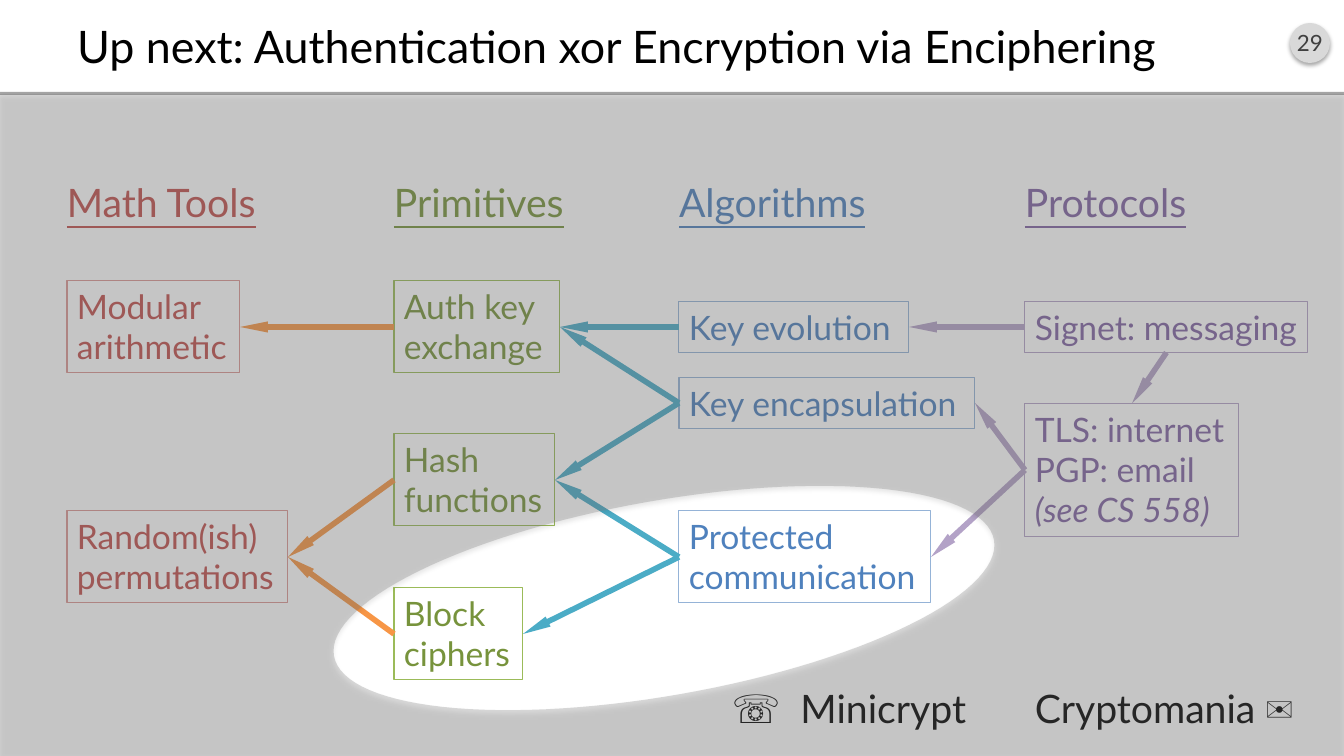
import math
import pptx
import pptx.util
import pptx.dml.color
import pptx.enum.shapes
import pptx.enum.text
import pptx.oxml
import pptx.oxml.ns

RGBColor = pptx.dml.color.RGBColor
SHAPE = pptx.enum.shapes.MSO_SHAPE
ALIGN = pptx.enum.text.PP_ALIGN
ANCHOR = pptx.enum.text.MSO_ANCHOR

BLACK = RGBColor(0, 0, 0)
BADGE_TEXT = RGBColor(0x40, 0x40, 0x40)
BADGE_FILL = RGBColor(0xD9, 0xD9, 0xD9)
RULE_GREY = RGBColor(0xA6, 0xA6, 0xA6)
VEIL_GREY = RGBColor(0x80, 0x80, 0x80)
RED, PINK = RGBColor(0xC0, 0x50, 0x4D), RGBColor(0xD9, 0x96, 0x94)
GREEN, LIME = RGBColor(0x77, 0x93, 0x3C), RGBColor(0x9B, 0xBB, 0x59)
BLUE, SKY = RGBColor(0x4F, 0x81, 0xBD), RGBColor(0x95, 0xB3, 0xD7)
PURPLE, LILAC = RGBColor(0x80, 0x64, 0xA2), RGBColor(0xB3, 0xA2, 0xC7)
ORANGE, TEAL = RGBColor(0xF7, 0x96, 0x46), RGBColor(0x4B, 0xAC, 0xC6)

FONT = "Lato"
WIDTH, HEIGHT = 1344, 756
TITLE = "Up next: Authentication xor Encryption via Enciphering"
PAGE = "29"

# heading, left, width, text colour, border colour, arrow colour
COLUMNS = [
    ("Math Tools", 67, 214, RED, PINK, None),
    ("Primitives", 394, 192, GREEN, LIME, ORANGE),
    ("Algorithms", 679, 208, BLUE, SKY, TEAL),
    ("Protocols", 1025, 181, PURPLE, LILAC, LILAC),
]
# name: column, centre height, width, paragraphs of lines
TOPICS = {
    "modular": (0, 327, 173, [["Modular", "arithmetic"]]),
    "random": (0, 557, 221, [["Random(ish)", "permutations"]]),
    "auth": (1, 327, 166, [["Auth key", "exchange"]]),
    "hash": (1, 480, 161, [["Hash", "functions"]]),
    "block": (1, 634, 129, [["Block", "ciphers"]]),
    "evolution": (2, 327, 230, [["Key evolution"]]),
    "encapsulation": (2, 403, 296, [["Key encapsulation"]]),
    "protected": (2, 557, 252, [["Protected", "communication"]]),
    "messaging": (3, 327, 283, [["Signet: messaging"]]),
    "internet": (3, 470, 214, [["TLS: internet", "PGP: email"], ["(see CS 558)"]]),
}
DEPENDENCIES = [
    ("auth", "modular"), ("hash", "random"), ("block", "random"),
    ("evolution", "auth"), ("encapsulation", "auth"), ("encapsulation", "hash"),
    ("protected", "hash"), ("protected", "block"), ("messaging", "evolution"),
    ("internet", "encapsulation"), ("internet", "protected"), ("messaging", "internet"),
]
WORLDS = [
    ("☏  Minicrypt", 713, 263, ALIGN.RIGHT),
    ("Cryptomania ✉", 1025, 300, ALIGN.LEFT),
]
VEIL_TOP = 94
SPOT_CENTRE, SPOT_LONG, SPOT_SHORT, SPOT_STEPS = (664, 598), (330, -58), (17, 96), 120
TOP, LEFT, BOTTOM, RIGHT = range(4)


def px(length):
    return round(length * 914400 / 100.8)


def box(*lengths):
    return [px(length) for length in lengths]


def add_run(paragraph, words, size, colour):
    run = paragraph.add_run()
    run.text = words
    run.font.name = FONT
    run.font.size = pptx.util.Pt(size)
    run.font.color.rgb = colour
    return run


def add_label(slide, place, paragraphs, size, colour):
    label = slide.shapes.add_textbox(*box(*place))
    frame = label.text_frame
    frame.word_wrap = False
    frame.auto_size = pptx.enum.text.MSO_AUTO_SIZE.SHAPE_TO_FIT_TEXT
    for i, lines in enumerate(paragraphs):
        paragraph = frame.add_paragraph() if i else frame.paragraphs[0]
        for j, words in enumerate(lines):
            if j:
                paragraph.add_line_break()
            add_run(paragraph, words, size, colour).font.italic = i > 0
    return label


def paint(shape, colour):
    shape.shadow.inherit = False
    shape.fill.solid()
    shape.fill.fore_color.rgb = colour
    shape.line.fill.background()


def add_xml(parent, tag, attributes=""):
    parent.append(pptx.oxml.parse_xml(
        f'<a:{tag} {pptx.oxml.ns.nsdecls("a")} {attributes}/>'))
    return parent[-1]


def cast_shadow(shape):
    effects = shape.element.spPr.find(pptx.oxml.ns.qn("a:effectLst"))
    shadow = add_xml(effects, "outerShdw",
                     'blurRad="39370" dist="22860" dir="5400000" rotWithShape="0"')
    add_xml(add_xml(shadow, "srgbClr", 'val="000000"'), "alpha", 'val="35000"')


def add_arrow(slide, start, start_site, end, end_site, colour):
    arrow = slide.shapes.add_connector(
        pptx.enum.shapes.MSO_CONNECTOR.STRAIGHT, 0, 0, 0, 0)
    arrow.begin_connect(start, start_site)
    arrow.end_connect(end, end_site)
    arrow.line.width = pptx.util.Pt(4)
    arrow.line.color.rgb = colour
    add_xml(arrow.line._get_or_add_ln(), "tailEnd", 'type="triangle" w="sm" len="lg"')
    add_xml(arrow.element.spPr, "effectLst")


def add_header(slide):
    badge = slide.shapes.add_shape(SHAPE.OVAL, *box(1290, 23, 40, 40))
    paint(badge, BADGE_FILL)
    cast_shadow(badge)
    badge.text_frame.margin_left = badge.text_frame.margin_right = 0
    badge.text_frame.vertical_anchor = ANCHOR.MIDDLE
    number = badge.text_frame.paragraphs[0]
    number.alignment = ALIGN.CENTER
    add_run(number, PAGE, 16, BADGE_TEXT)

    rule = slide.shapes.add_shape(SHAPE.RECTANGLE, *box(0, 92, WIDTH, 3))
    paint(rule, RULE_GREY)

    title = slide.shapes.title
    title.left, title.top, title.width, title.height = box(67, 16, 1210, 60)
    title.text_frame.vertical_anchor = ANCHOR.MIDDLE
    heading = title.text_frame.paragraphs[0]
    heading.alignment = ALIGN.LEFT
    add_run(heading, TITLE, 32, BLACK)


def add_map(slide):
    for heading, left, width, colour, border, arrow in COLUMNS:
        label = add_label(slide, (left, 173, width, 57), [[heading]], 28, colour)
        label.text_frame.margin_left = 0
        label.text_frame.paragraphs[0].runs[0].font.underline = True

    for world, left, width, alignment in WORLDS:
        label = add_label(slide, (left, 679, width, 57), [[world]], 28, BLACK)
        label.text_frame.paragraphs[0].alignment = alignment

    topics = {}
    for name, (column, middle, width, paragraphs) in TOPICS.items():
        heading, left, _, colour, border, arrow = COLUMNS[column]
        height = 10 + 41 * sum(len(lines) for lines in paragraphs)
        topic = add_label(slide, (left, middle - height / 2, width, height),
                          paragraphs, 24, colour)
        topic.line.color.rgb = border
        topic.line.width = pptx.util.Pt(0.75)
        topics[name] = topic

    for user, used in DEPENDENCIES:
        column = TOPICS[user][0]
        sites = (BOTTOM, TOP) if column == TOPICS[used][0] else (LEFT, RIGHT)
        add_arrow(slide, topics[user], sites[0], topics[used], sites[1],
                  COLUMNS[column][-1])


def add_veil(slide):
    spot = []
    for step in range(SPOT_STEPS):
        turn = -2 * math.pi * step / SPOT_STEPS
        spot.append(tuple(
            px(c + a * math.cos(turn) + b * math.sin(turn))
            for c, a, b in zip(SPOT_CENTRE, SPOT_LONG, SPOT_SHORT)))
    corners = [box(0, VEIL_TOP), box(WIDTH, VEIL_TOP), box(WIDTH, HEIGHT), box(0, HEIGHT)]
    outline = slide.shapes.build_freeform(*spot[0])
    outline.add_line_segments(spot[1:], close=True)
    outline.move_to(*corners[0])
    outline.add_line_segments(corners[1:], close=True)
    veil = outline.convert_to_shape()
    paint(veil, VEIL_GREY)
    tint = veil.element.spPr.find(".//" + pptx.oxml.ns.qn("a:srgbClr"))
    add_xml(tint, "alpha", 'val="30000"')
    cast_shadow(veil)


def main():
    deck = pptx.Presentation()
    deck.slide_width, deck.slide_height = box(WIDTH, HEIGHT)
    slide = deck.slides.add_slide(deck.slide_layouts[5])
    add_header(slide)
    add_map(slide)
    add_veil(slide)
    deck.save("out.pptx")


if __name__ == "__main__":
    main()
